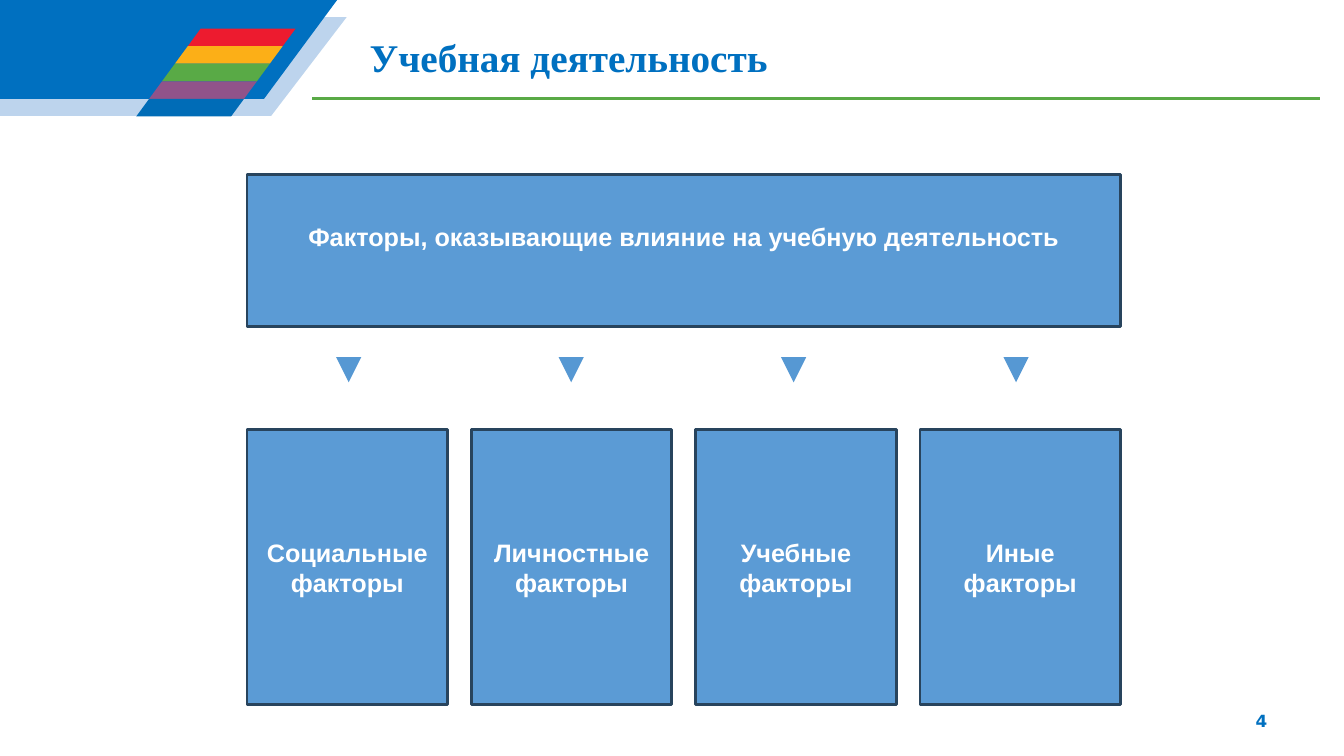
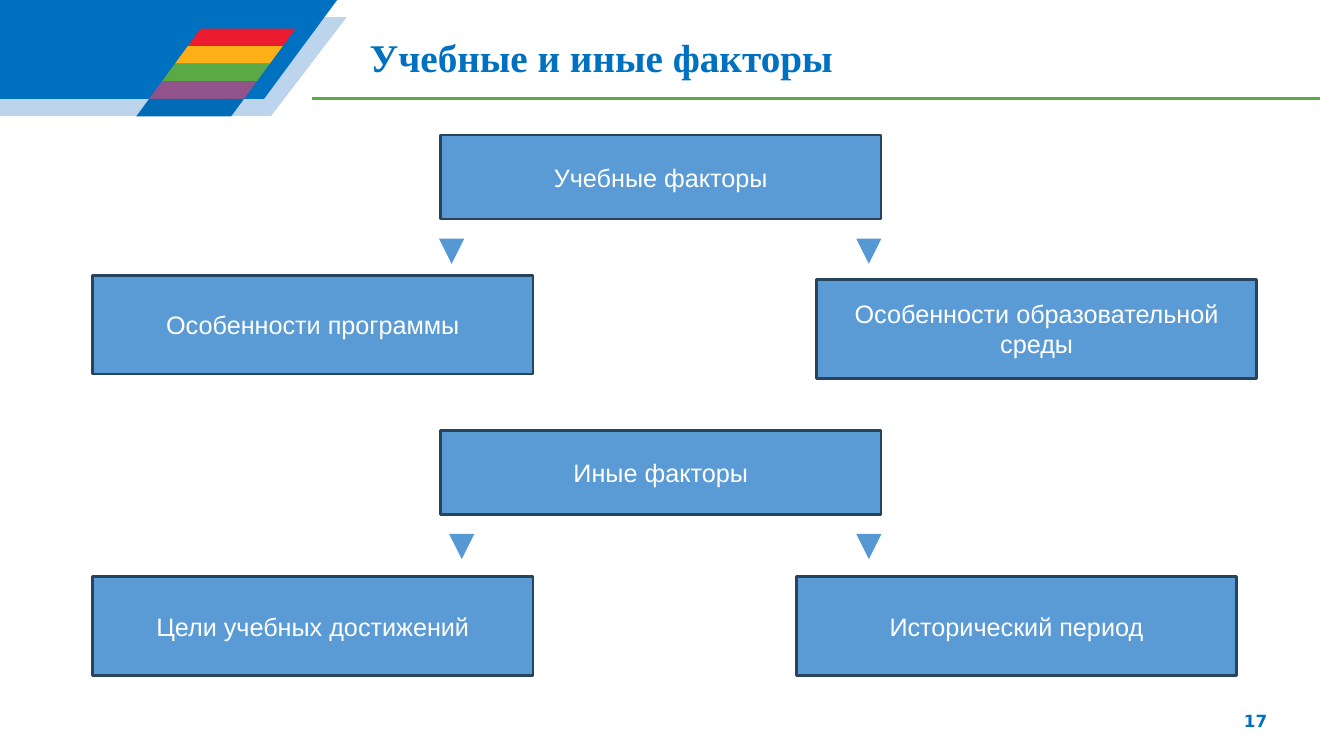
from dataclasses import dataclass

from lxml.etree import SubElement
from pptx import Presentation
from pptx.dml.color import RGBColor
from pptx.enum.shapes import MSO_CONNECTOR, MSO_SHAPE
from pptx.enum.text import MSO_ANCHOR, PP_ALIGN
from pptx.oxml.ns import qn
from pptx.util import Pt


@dataclass(frozen=True)
class Theme:
    brand: str = "0070C0"
    band_shade: str = "BDD4ED"
    rule: str = "59AA46"
    stripes: tuple = ("ED1B2F", "FCAF17", "59AA46", "91538A", "006CB7")
    box_fill: str = "5B9BD5"
    box_line: str = "28445D"
    arrow: str = "5698D3"
    white: str = "FFFFFF"
    title_font: str = "Times New Roman"
    body_font: str = "Arial"
    number_font: str = "DejaVu Sans"
    title_size: int = 28
    body_size: int = 18
    number_size: int = 12


THEME = Theme()
TITLE = {"name": THEME.title_font, "size": Pt(THEME.title_size), "bold": True, "color": THEME.brand}
NUMBER = {"name": THEME.number_font, "size": Pt(THEME.number_size), "bold": True, "color": THEME.brand}
BODY = {"name": THEME.body_font, "size": Pt(THEME.body_size), "bold": False, "color": THEME.white}
STRONG = {**BODY, "bold": True}


def set_all(target, values):
    for name, value in values.items():
        setattr(target, name, value)


def paint(shape, fill, line=None):
    """Give a shape a flat fill and an optional 2 pt outline."""
    shape.shadow.inherit = False
    shape.fill.solid()
    shape.fill.fore_color.rgb = RGBColor.from_string(fill)
    if line:
        shape.line.color.rgb = RGBColor.from_string(line)
        shape.line.width = Pt(2)
    else:
        shape.line.fill.background()


def write(shape, text, style, align, anchor, bottom=3.6):
    frame = shape.text_frame
    set_all(frame, {"word_wrap": True, "vertical_anchor": anchor, "margin_bottom": Pt(bottom)})
    para = frame.paragraphs[0]
    para.alignment = align
    span = para.add_run()
    span.text = text
    set_all(span.font, {name: value for name, value in style.items() if name != "color"})
    span.font.color.rgb = RGBColor.from_string(style["color"])


def add_label(page, box, text, style, align, anchor):
    label = page.shapes.add_textbox(*map(Pt, box))
    write(label, text, style, align, anchor)


def add_box(page, box, text, style=BODY, bottom=3.6):
    shape = page.shapes.add_shape(MSO_SHAPE.RECTANGLE, *map(Pt, box))
    paint(shape, THEME.box_fill, THEME.box_line)
    write(shape, text, style, PP_ALIGN.CENTER, MSO_ANCHOR.MIDDLE, bottom)


def add_line(page, start, end, color, width):
    line = page.shapes.add_connector(MSO_CONNECTOR.STRAIGHT, *map(Pt, (*start, *end)))
    line.line.color.rgb = RGBColor.from_string(color)
    line.line.width = Pt(width)
    SubElement(line.element.spPr, qn("a:effectLst"))
    return line


def add_down_arrow(page, x, y, length):
    arrow = add_line(page, (x, y), (x, y + length), THEME.arrow, 6)
    outline = arrow.element.spPr.find(qn("a:ln"))
    SubElement(outline, qn("a:tailEnd"), type="triangle")


def add_band(page, top, height, bottom_width, top_width, color):
    """Draw a band from the left edge whose right side slants."""
    builder = page.shapes.build_freeform(0, Pt(top))
    corners = ((0, top + height), (bottom_width, top + height), (top_width, top))
    builder.add_line_segments([(Pt(x), Pt(y)) for x, y in corners], close=True)
    paint(builder.convert_to_shape(), color)


def add_stripes(page, left, top, width, height):
    """Stack slanted stripes, each one shifted left by the slant."""
    slant = 0.734
    group = page.shapes.add_group_shape()
    for row, color in enumerate(THEME.stripes):
        box = (left - row * height * slant, top + row * height, width, height)
        stripe = group.shapes.add_shape(MSO_SHAPE.PARALLELOGRAM, *map(Pt, box))
        stripe.adjustments[0] = slant
        paint(stripe, color)


def add_page(deck, title, number):
    """Add a blank page with its header, title and page number."""
    page = deck.slides.add_slide(deck.slide_layouts[6])
    add_label(page, (257, 20.2, 703, 41), title, TITLE, PP_ALIGN.JUSTIFY, MSO_ANCHOR.TOP)
    add_band(page, 12.2, 70.6, 193.7, 247.7, THEME.band_shade)
    add_band(page, 0, 70.6, 188.6, 240.8, THEME.brand)
    add_stripes(page, 134.2, 20.4, 77, 12.55)
    add_line(page, (223.2, 70.6), (943.2, 70.6), THEME.rule, 2)
    add_label(page, (688.3, 500.4, 224, 28.8), str(number), NUMBER, PP_ALIGN.RIGHT, MSO_ANCHOR.MIDDLE)
    return page


def add_factor_columns(page, box, heading, names):
    """Place a wide heading over equal columns, with an arrow above each."""
    left, top, width, height = box
    column_width, column_height = 143.3, 196.6
    last = len(names) - 1
    step = (width - column_width) / last
    add_box(page, (left, top, width, 108.7), heading, STRONG, bottom=24.3)
    for index, name in enumerate(names):
        add_down_arrow(page, left + 72.7 + index * 158.9, top + 132.5, 16)
        column = (left + index * step, top + height - column_height, column_width, column_height)
        add_box(page, column, name, STRONG)


def add_branch(page, box, heading, arrows, children):
    """Place a heading, the arrows under it, and child boxes offset from the region."""
    left, top, width, _ = box
    box_width = 314.6
    add_box(page, (left + (width - box_width) / 2, top, box_width, 60), heading)
    for x in arrows:
        add_down_arrow(page, left + x, top + 74, 18)
    for x, y, name in children:
        add_box(page, (left + x, top + y, box_width, 70.6), name)


def main():
    deck = Presentation()
    set_all(deck, {"slide_width": Pt(960), "slide_height": Pt(540)})

    page = add_page(deck, "Учебная деятельность", 4)
    add_factor_columns(
        page, (176.4, 124.6, 624, 378.8),
        "Факторы, оказывающие влияние на учебную деятельность",
        ("Социальные факторы", "Личностные факторы", "Учебные факторы", "Иные факторы"))

    page = add_page(deck, "Учебные и иные факторы", 17)
    add_branch(
        page, (66.2, 96.5, 811.6, 175), "Учебные факторы", (256.4, 554.4),
        ((0, 100, "Особенности программы"), (517, 103, "Особенности образовательной среды")))
    add_branch(
        page, (66.2, 307.4, 811.6, 175), "Иные факторы", (263.6, 554.4),
        ((0, 104.4, "Цели учебных достижений"), (502.6, 104.4, "Исторический период")))

    deck.save("out.pptx")


if __name__ == "__main__":
    main()
